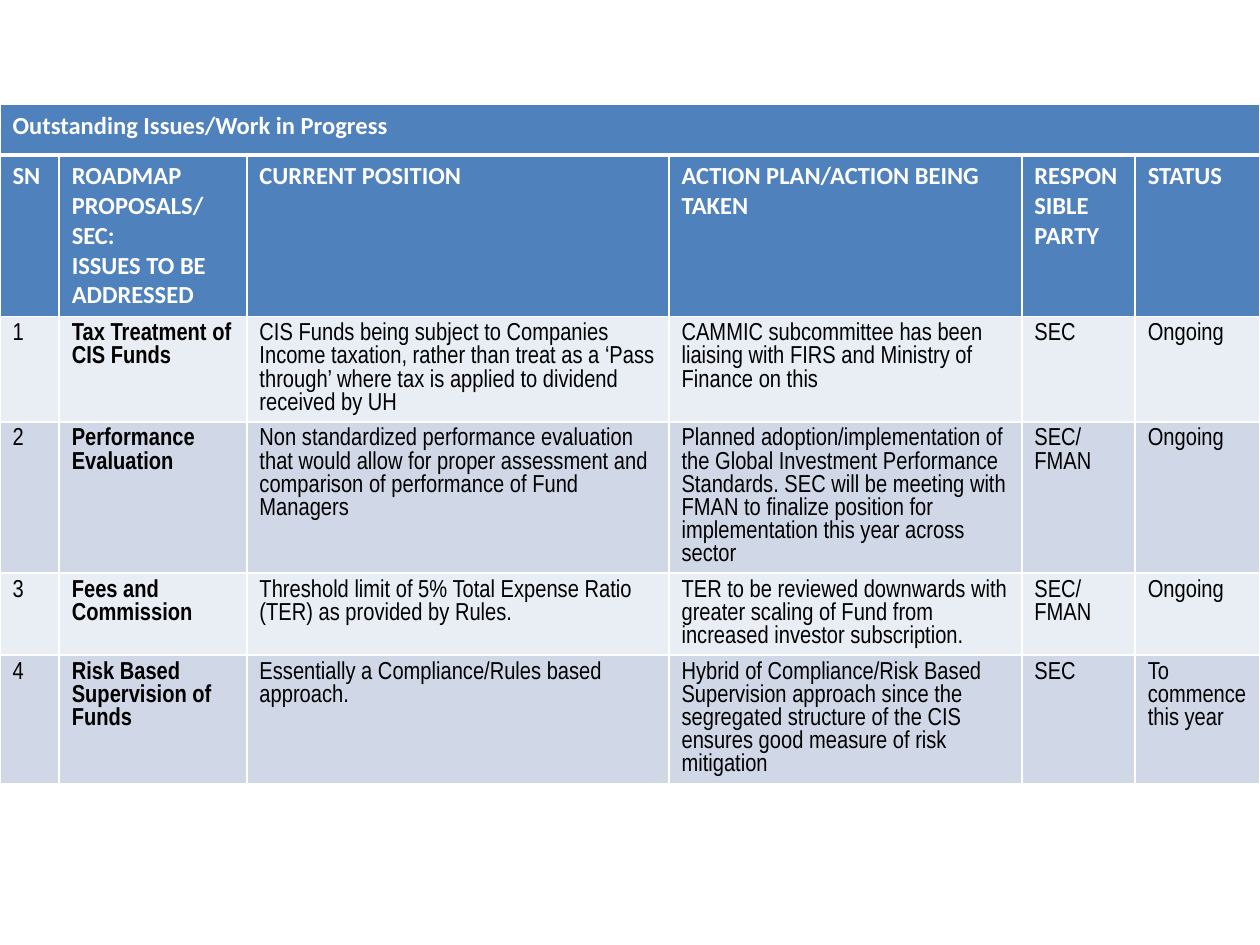
from lxml import etree
from pptx import Presentation
from pptx import util as u
from pptx.dml.color import RGBColor
from pptx.oxml.ns import qn

WHITE = RGBColor(0xFF, 0xFF, 0xFF)
BLACK = RGBColor(0x00, 0x00, 0x00)
HEADER_BLUE = RGBColor(0x4F, 0x81, 0xBD)
BANDS = [RGBColor(0xE9, 0xED, 0xF4), RGBColor(0xD0, 0xD8, 0xE8)]

COLUMN_WIDTHS = [0.47, 1.49, 3.35, 2.8, 0.9, 0.99]
ROW_HEIGHTS = [0.4, 1.28, 0.83, 1.2, 0.65, 1.02]
ROWS = [
    ["Outstanding Issues/Work in Progress"],
    ["SN", "ROADMAP PROPOSALS/ SEC:\nISSUES TO BE\nADDRESSED", "CURRENT POSITION",
     "ACTION PLAN/ACTION BEING TAKEN", "RESPONSIBLE PARTY", "STATUS"],
    ["1", "Tax Treatment of CIS Funds",
     "CIS Funds being subject to Companies Income taxation, rather than treat as a "
     "‘Pass through’ where tax is applied to dividend received by UH",
     "CAMMIC subcommittee has been liaising with FIRS and Ministry of Finance on this",
     "SEC", "Ongoing"],
    ["2", "Performance Evaluation",
     "Non standardized performance evaluation that would allow for proper assessment "
     "and comparison of performance of Fund Managers",
     "Planned adoption/implementation of the Global Investment Performance Standards. "
     "SEC will be meeting with FMAN to finalize position for implementation this year "
     "across sector",
     "SEC/\nFMAN", "Ongoing"],
    ["3", "Fees and Commission",
     "Threshold limit of 5% Total Expense Ratio (TER) as provided by Rules.",
     "TER to be reviewed downwards with greater scaling of Fund from increased "
     "investor subscription.",
     "SEC/\nFMAN", "Ongoing"],
    ["4", "Risk Based Supervision of Funds",
     "Essentially a Compliance/Rules based approach.",
     "Hybrid of Compliance/Risk Based Supervision approach since the segregated "
     "structure of the CIS ensures good measure of risk mitigation",
     "SEC", "To commence this year"],
]


def add_borders(cell, bottom_width):
    properties = cell._tc.get_or_add_tcPr()
    widths = {"a:lnL": 1, "a:lnR": 1, "a:lnT": 1, "a:lnB": bottom_width}
    for position, (tag, width) in enumerate(widths.items()):
        line = etree.Element(qn(tag), w=str(u.Pt(width)))
        fill = etree.SubElement(line, qn("a:solidFill"))
        etree.SubElement(fill, qn("a:srgbClr"), val=str(WHITE))
        properties.insert(position, line)


def write_cell(cell, content, font_name, color, bold):
    for index, line in enumerate(content.split("\n")):
        frame = cell.text_frame
        para = frame.paragraphs[0] if index == 0 else frame.add_paragraph()
        span = para.add_run()
        span.text = line
        span.font.name = font_name
        span.font.size = u.Pt(14)
        span.font.bold = bold
        span.font.color.rgb = color


deck = Presentation()
deck.slide_width = u.Inches(10)
deck.slide_height = u.Inches(7.5)
page = deck.slides.add_slide(deck.slide_layouts[6])

table = page.shapes.add_table(
    len(ROWS), len(COLUMN_WIDTHS), 0, u.Inches(0.83),
    deck.slide_width, u.Inches(sum(ROW_HEIGHTS))).table
for column, width in zip(table.columns, COLUMN_WIDTHS):
    column.width = u.Inches(width)
for row, height in zip(table.rows, ROW_HEIGHTS):
    row.height = u.Inches(height)
table.cell(0, 0).merge(table.cell(0, len(COLUMN_WIDTHS) - 1))

for row_index, row in enumerate(table.rows):
    is_header = row_index < 2
    for cell in row.cells:
        cell.fill.solid()
        cell.fill.fore_color.rgb = HEADER_BLUE if is_header else BANDS[row_index % 2]
        add_borders(cell, 3 if row_index == 0 else 1)
    for column_index, content in enumerate(ROWS[row_index]):
        write_cell(
            table.cell(row_index, column_index), content,
            "Calibri" if is_header else "Arial Narrow",
            WHITE if is_header else BLACK,
            is_header or column_index == 1)

deck.save("out.pptx")
